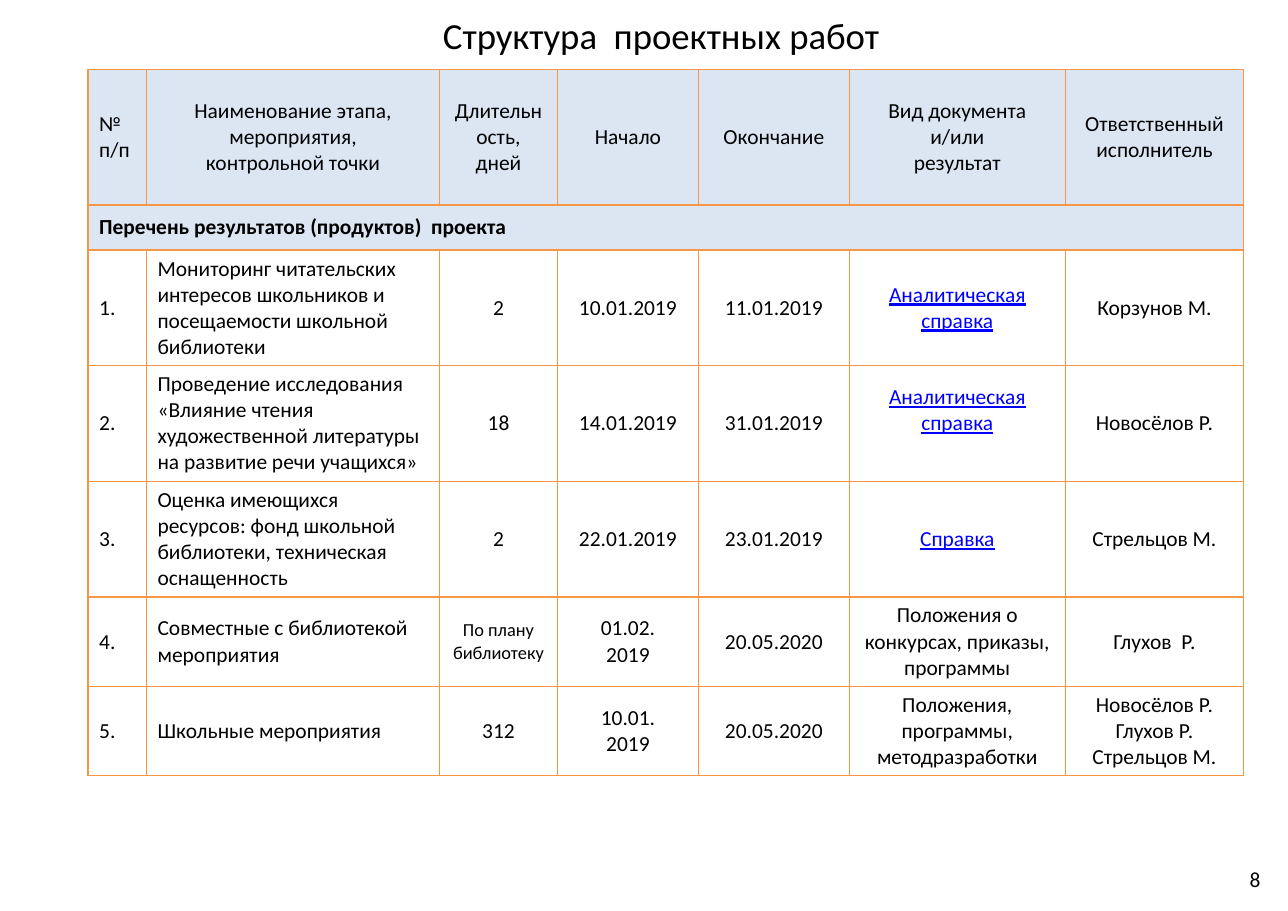
from lxml import etree
from pptx import Presentation
from pptx.dml.color import RGBColor
from pptx.enum.text import MSO_ANCHOR, PP_ALIGN
from pptx.oxml.ns import qn
from pptx.util import Inches, Pt

LEFT, CENTER, RIGHT = PP_ALIGN.LEFT, PP_ALIGN.CENTER, PP_ALIGN.RIGHT
MIDDLE = MSO_ANCHOR.MIDDLE

COLORS = {"text": "000000", "link": "0000FF", "header": "DCE6F2", "border": "F79646"}
FONT = "Calibri"

COLUMN_WIDTHS = [0.53, 2.66, 1.07, 1.28, 1.37, 1.96, 1.62]
ROW_HEIGHTS = [1.23, 0.41, 1.05, 1.05, 1.05, 0.81, 0.81]
HEADER_ROWS = 2
SECTION_ROW = 1
LEFT_COLUMNS = (0, 1)
LINKS = ("Аналитическая справка", "Справка")
SMALL_TEXT = "По плану библиотеку"
RAISED_CELL = (3, 5)

ROWS = [
    ["№\nп/п", "Наименование этапа,\nмероприятия,\nконтрольной точки",
     "Длительность,\nдней", "Начало", "Окончание",
     "Вид документа\nи/или\nрезультат", "Ответственный\nисполнитель"],
    ["Перечень результатов (продуктов)  проекта"],
    ["1.", "Мониторинг читательских интересов школьников и посещаемости школьной библиотеки",
     "2", "10.01.2019", "11.01.2019", "Аналитическая справка", "Корзунов М."],
    ["2.", "Проведение исследования «Влияние чтения художественной литературы "
     "на развитие речи учащихся»",
     "18", "14.01.2019", "31.01.2019", "Аналитическая справка", "Новосёлов Р."],
    ["3.", "Оценка имеющихся ресурсов: фонд школьной библиотеки, техническая оснащенность",
     "2", "22.01.2019", "23.01.2019", "Справка", "Стрельцов М."],
    ["4.", "Совместные с библиотекой мероприятия", "По плану библиотеку",
     "01.02.\n2019", "20.05.2020", "Положения о конкурсах, приказы, программы", "Глухов  Р."],
    ["5.", "Школьные мероприятия", "312", "10.01.\n2019", "20.05.2020",
     "Положения, программы, методразработки", "Новосёлов Р.\nГлухов Р.\nСтрельцов М."],
]


def write_text(frame, text, size=14, color="text", align=LEFT, bold=False,
               underline=False, spacing=None):
    """Fill a text frame, one paragraph per line of text."""
    frame.word_wrap = True
    for index, line in enumerate(text.split("\n")):
        para = frame.add_paragraph() if index else frame.paragraphs[0]
        para.alignment = align
        if spacing:
            para.line_spacing = spacing
        span = para.add_run()
        span.text = line
        font = span.font
        font.name, font.size = FONT, Pt(size)
        font.bold, font.underline = bold, underline
        font.color.rgb = RGBColor.from_string(COLORS[color])


def set_insets(frame):
    frame.margin_left = frame.margin_right = Inches(0.11)
    frame.margin_top = frame.margin_bottom = Inches(0.06)
    frame.vertical_anchor = MIDDLE


def add_borders(cell):
    properties = cell._tc.get_or_add_tcPr()
    for side in ("lnL", "lnR", "lnT", "lnB"):
        line = etree.SubElement(properties, qn(f"a:{side}"), w=str(Pt(1)))
        fill = etree.SubElement(line, qn("a:solidFill"))
        etree.SubElement(fill, qn("a:srgbClr"), val=COLORS["border"])


def add_title(page, left, top, width, height):
    title = page.shapes.title
    title.left, title.top = Inches(left), Inches(top)
    title.width, title.height = Inches(width), Inches(height)
    set_insets(title.text_frame)
    write_text(title.text_frame, "Структура  проектных работ", size=24,
               align=CENTER, spacing=0.85)


def add_work_table(page, left, top):
    frame = page.shapes.add_table(
        len(ROWS), len(COLUMN_WIDTHS), Inches(left), Inches(top),
        Inches(sum(COLUMN_WIDTHS)), Inches(sum(ROW_HEIGHTS)))
    table = frame.table
    table.first_row = table.horz_banding = False
    for column, width in zip(table.columns, COLUMN_WIDTHS):
        column.width = Inches(width)
    for row, height in zip(table.rows, ROW_HEIGHTS):
        row.height = Inches(height)

    for row_index, row in enumerate(table.rows):
        for cell in row.cells:
            add_borders(cell)
            cell.vertical_anchor = MIDDLE
            if row_index < HEADER_ROWS:
                cell.fill.solid()
                cell.fill.fore_color.rgb = RGBColor.from_string(COLORS["header"])
            else:
                cell.fill.background()
    table.cell(SECTION_ROW, 0).merge(table.cell(SECTION_ROW, len(COLUMN_WIDTHS) - 1))

    for row_index, texts in enumerate(ROWS):
        for column_index, text in enumerate(texts):
            is_link = text in LINKS
            is_left = column_index in LEFT_COLUMNS and (row_index or not column_index)
            write_text(table.cell(row_index, column_index).text_frame, text,
                       size=12 if text == SMALL_TEXT else 14,
                       color="link" if is_link else "text", underline=is_link,
                       align=LEFT if is_left else CENTER,
                       bold=row_index == SECTION_ROW)
    table.cell(*RAISED_CELL).margin_bottom = Inches(0.29)


def add_page_number(page, left, top, width, height):
    box = page.shapes.add_textbox(Inches(left), Inches(top), Inches(width), Inches(height))
    set_insets(box.text_frame)
    write_text(box.text_frame, "8", align=RIGHT)


def main():
    deck = Presentation()
    deck.slide_width, deck.slide_height = Inches(11.69), Inches(8.27)
    page = deck.slides.add_slide(deck.slide_layouts.get_by_name("Title Only"))
    add_title(page, 0.8, 0.1, 10.4, 0.49)
    add_work_table(page, 0.8, 0.63)
    add_page_number(page, 8.82, 7.76, 2.73, 0.44)
    deck.save("out.pptx")


if __name__ == "__main__":
    main()
